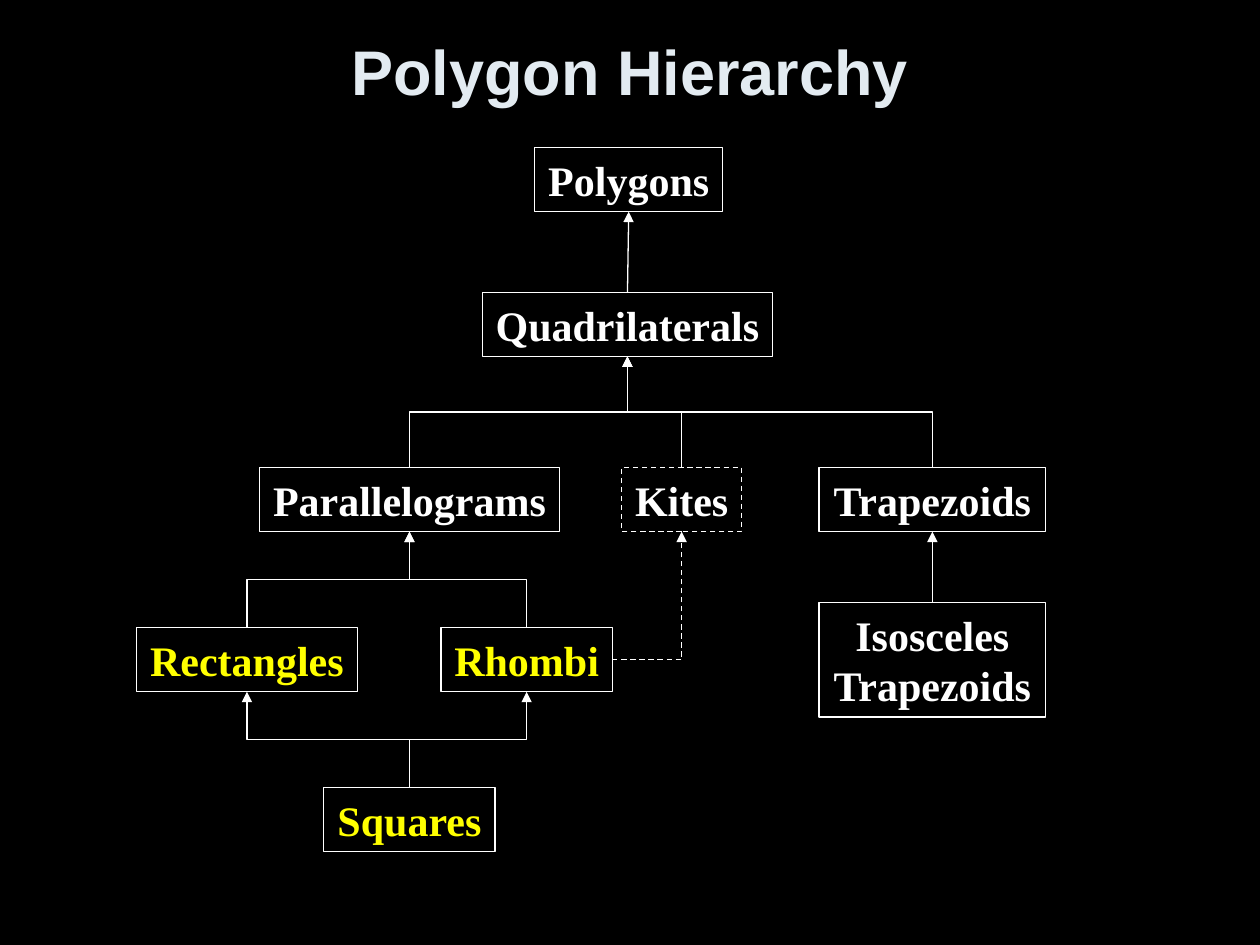
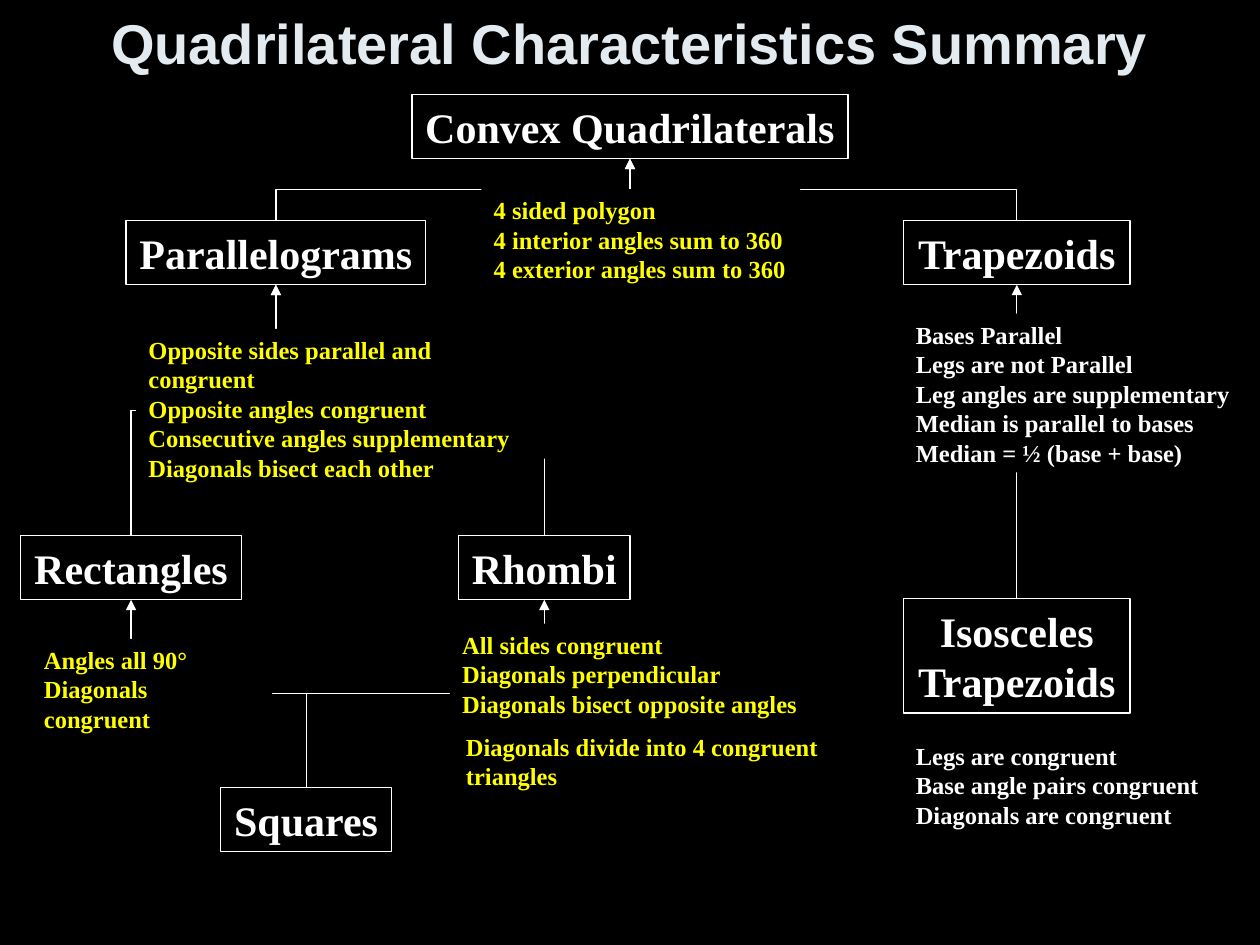
from lxml.etree import SubElement
from pptx import Presentation
from pptx.dml.color import RGBColor
from pptx.enum.dml import MSO_LINE
from pptx.enum.shapes import MSO_CONNECTOR, MSO_SHAPE
from pptx.enum.text import MSO_ANCHOR, PP_ALIGN
from pptx.oxml.ns import qn
from pptx.util import Inches, Pt

INK = {"back": "000000", "title": "E3EBF1", "white": "FFFFFF", "yellow": "FFFF00"}
SERIF = "Times New Roman"
TOP, BOTTOM, RIGHT = 0, 2, 3
ISO = "Isosceles\vTrapezoids"
WIDTHS = {
    "Polygons": 1.49, "Quadrilaterals": 2.3, "Convex Quadrilaterals": 3.46,
    "Parallelograms": 2.38, "Kites": 0.95, "Trapezoids": 1.8, ISO: 1.8,
    "Rectangles": 1.75, "Rhombi": 1.36, "Squares": 1.36,
}

HIER_NODES = {
    "Polygons": (3.91, 0, "white"),
    "Quadrilaterals": (3.9, 1.15, "white"),
    "Parallelograms": (2.17, 2.54, "white"),
    "Kites": (4.33, 2.54, "white"),
    "Trapezoids": (6.32, 2.54, "white"),
    ISO: (6.32, 3.61, "white"),
    "Rectangles": (0.88, 3.81, "yellow"),
    "Rhombi": (3.1, 3.81, "yellow"),
    "Squares": (2.17, 5.08, "yellow"),
}
SHARED_LINKS = [
    ("Rhombi", "Parallelograms"), ("Rectangles", "Parallelograms"),
    ("Squares", "Rectangles"), ("Squares", "Rhombi"), (ISO, "Trapezoids"),
]
HIER_LINKS = SHARED_LINKS + [
    ("Parallelograms", "Quadrilaterals"), ("Kites", "Quadrilaterals"),
    ("Trapezoids", "Quadrilaterals"), ("Quadrilaterals", "Polygons"),
]

SUM_NODES = {
    "Convex Quadrilaterals": (4.83, 0, "white"),
    "Parallelograms": (2.02, 1, "white"),
    "Trapezoids": (7.9, 1, "white"),
    "Rectangles": (0.87, 3.5, "white"),
    "Rhombi": (4.15, 3.5, "white"),
    ISO: (7.9, 4, "white"),
    "Squares": (2.26, 5.5, "white"),
}
SUM_LINKS = SHARED_LINKS + [
    ("Parallelograms", "Convex Quadrilaterals"),
    ("Trapezoids", "Convex Quadrilaterals"),
]
FACTS = [
    ((1.08, 2.61, 3.33, 1.03), "yellow", [
        "Opposite sides parallel and congruent", "Opposite angles congruent",
        "Consecutive angles supplementary", "Diagonals bisect each other"]),
    ((7.17, 2.49, 2.75, 1.26), "white", [
        "Bases Parallel", "Legs are not Parallel", "Leg angles are supplementary",
        "Median is parallel to bases\vMedian = ½ (base + base)"]),
    ((0.25, 5.07, 1.91, 0.81), "yellow", ["Angles all 90°", "Diagonals congruent"]),
    ((3.6, 5.76, 3.14, 0.57), "yellow", ["Diagonals divide into 4 congruent triangles"]),
    ((3.57, 4.95, 2.9, 0.81), "yellow", [
        "All sides congruent", "Diagonals perpendicular",
        "Diagonals bisect opposite angles"]),
    ((7.17, 5.83, 2.5, 0.81), "white", [
        "Legs are congruent", "Base angle pairs congruent", "Diagonals are congruent"]),
    ((3.82, 1.5, 2.53, 0.81), "yellow", [
        "4 sided polygon", "4 interior angles sum to 360",
        "4 exterior angles sum to 360"]),
]


def tint(name):
    """Return the named colour."""
    return RGBColor.from_string(INK[name])


def write(shape, lines, size, ink, font=SERIF, align=PP_ALIGN.CENTER,
          anchor=MSO_ANCHOR.MIDDLE, wrap=True):
    """Fill a shape with bold text, one paragraph a line."""
    frame = shape.text_frame
    frame.text = "\n".join(lines)
    frame.word_wrap = wrap
    frame.vertical_anchor = anchor
    for para in frame.paragraphs:
        para.alignment = align
        para.font.name = font
        para.font.size = Pt(size)
        para.font.bold = True
        para.font.color.rgb = tint(ink)


def start(deck, title, box, size):
    """Add a black slide with its title."""
    slide = deck.slides.add_slide(deck.slide_layouts[6])
    slide.background.fill.solid()
    slide.background.fill.fore_color.rgb = tint("back")
    head = slide.shapes.add_textbox(*map(Inches, box))
    write(head, [title], size, "title", "Arial")
    return slide


def stroke(line, dash=False):
    """Style an outline or a link."""
    line.color.rgb = tint("white")
    line.width = Pt(0.75)
    if dash:
        line.dash_style = MSO_LINE.DASH


def node(slide, mid, top, text, ink):
    """Draw a framed label centred on mid."""
    width, height = WIDTHS[text], 0.91 if "\v" in text else 0.51
    shape = slide.shapes.add_shape(
        MSO_SHAPE.RECTANGLE, *map(Inches, (mid - width / 2, top, width, height)))
    shape.shadow.inherit = False
    shape.fill.background()
    stroke(shape.line, text == "Kites")
    write(shape, [text], 24, ink, wrap=False)
    return shape


def link(slide, low, high, side=TOP, dash=False):
    """Join a lower label to the bottom of a higher one with an arrow."""
    gap = low.left + low.width // 2 - high.left - high.width // 2
    straight = abs(gap) < Inches(0.05)
    kind = MSO_CONNECTOR.STRAIGHT if straight else MSO_CONNECTOR.ELBOW
    wire = slide.shapes.add_connector(kind, 0, 0, 0, 0)
    wire.begin_connect(low, side)
    wire.end_connect(high, BOTTOM)
    stroke(wire.line, dash)
    props = wire.element.spPr
    if side == RIGHT:
        props.find(qn("a:prstGeom")).set("prst", "bentConnector2")
    elif not straight:
        upright(wire, props.find(qn("a:xfrm")))
    SubElement(props.find(qn("a:ln")), qn("a:tailEnd"), type="triangle")
    SubElement(props, qn("a:effectLst"))


def upright(wire, form):
    """Turn an elbow so that it leaves and arrives vertically."""
    back = wire.end_x < wire.begin_x
    wide, tall = wire.width, wire.height
    shift = (wide - tall) // 2
    wire.left, wire.top = wire.left + shift, wire.top - shift
    wire.width, wire.height = tall, wide
    for key in ("flipH", "flipV"):
        form.attrib.pop(key, None)
    form.set("rot", str((90 if back else 270) * 60000))
    if back:
        form.set("flipH", "1")


def tree(slide, left, top, nodes, links):
    """Draw labels and their arrows from a top left corner."""
    shapes = {text: node(slide, left + mid, top + drop, text, ink)
              for text, (mid, drop, ink) in nodes.items()}
    for low, high in links:
        link(slide, shapes[low], shapes[high])
    return shapes


def fact(slide, box, ink, lines):
    """Place a black panel of facts over the arrows."""
    panel = slide.shapes.add_shape(MSO_SHAPE.RECTANGLE, *map(Inches, box))
    panel.shadow.inherit = False
    panel.fill.solid()
    panel.fill.fore_color.rgb = tint("back")
    panel.line.fill.background()
    write(panel, lines, 14, ink, align=PP_ALIGN.LEFT, anchor=MSO_ANCHOR.TOP)


def order(deck):
    """Build the hierarchy slide."""
    slide = start(deck, "Polygon Hierarchy", (0.75, 0.18, 8.5, 0.75), 36)
    shapes = tree(slide, 1.08, 1.17, HIER_NODES, HIER_LINKS)
    link(slide, shapes["Rhombi"], shapes["Kites"], RIGHT, True)


def traits(deck):
    """Build the summary slide."""
    slide = start(deck, "Quadrilateral Characteristics Summary",
                  (0.75, 0.08, 8.5, 0.51), 32)
    tree(slide, 0.17, 0.75, SUM_NODES, SUM_LINKS)
    for box, ink, lines in FACTS:
        fact(slide, box, ink, lines)


def main():
    """Build and save the deck."""
    deck = Presentation()
    deck.slide_width, deck.slide_height = Inches(10), Inches(7.5)
    order(deck)
    traits(deck)
    deck.save("out.pptx")


if __name__ == "__main__":
    main()
